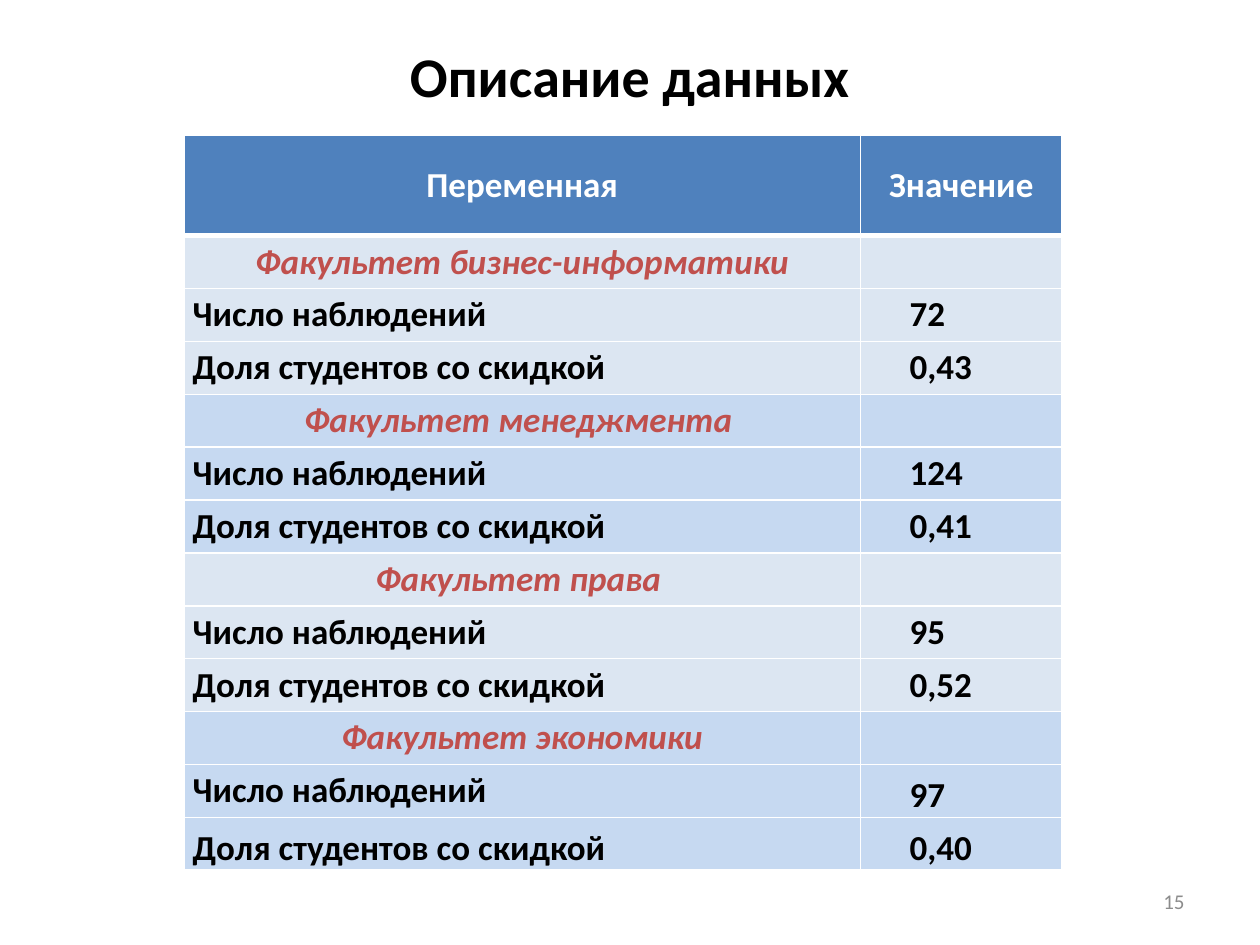
from lxml import etree
from pptx import Presentation
from pptx import util as u
from pptx.dml.color import RGBColor
from pptx.enum import text
from pptx.oxml.ns import qn

FONT = "Calibri"
COLORS = {
    "header": "4F81BD", "light": "DCE6F2", "blue": "C6D9F1",
    "faculty": "C0504D", "white": "FFFFFF", "black": "000000", "grey": "8C8C8C",
}
HEADER = ("Переменная", "Значение")
COUNT, SHARE = "Число наблюдений", "Доля студентов со скидкой"
FACULTIES = [
    ("Факультет бизнес-информатики", "72", "0,43"),
    ("Факультет менеджмента ", "124", "0,41"),
    ("Факультет права ", "95", "0,52"),
    ("Факультет экономики", "97", "0,40"),
]
COLUMNS = (5.37, 1.6)
HEADER_HEIGHT, ROW_HEIGHT = 0.8, 0.42
LEFT, CENTER, RIGHT = text.PP_ALIGN.LEFT, text.PP_ALIGN.CENTER, text.PP_ALIGN.RIGHT
MIDDLE, BOTTOM = text.MSO_ANCHOR.MIDDLE, text.MSO_ANCHOR.BOTTOM


def rgb(name):
    return RGBColor.from_string(COLORS[name])


def write(tf, words, size, color, align, bold=False, italic=False):
    """Set one formatted paragraph and return it."""
    p = tf.paragraphs[0]
    p.text = words
    p.alignment = align
    for r in p.runs:
        r.font.name, r.font.size = FONT, u.Pt(size)
        r.font.bold, r.font.italic = bold, italic
        r.font.color.rgb = rgb(color)
    return p


def set_borders(cell, top=1, bottom=1):
    """Draw white cell borders; widths are in points."""
    tc_pr = cell._tc.get_or_add_tcPr()
    widths = {"a:lnL": 1, "a:lnR": 1, "a:lnT": top, "a:lnB": bottom}
    for i, (tag, width) in enumerate(widths.items()):
        ln = etree.Element(qn(tag), w=str(u.Pt(width)))
        fill = etree.SubElement(ln, qn("a:solidFill"))
        etree.SubElement(fill, qn("a:srgbClr"), val=COLORS["white"])
        tc_pr.insert(i, ln)


def style_cell(cell, fill, anchor=MIDDLE):
    cell.fill.solid()
    cell.fill.fore_color.rgb = rgb(fill)
    cell.vertical_anchor = anchor
    cell.margin_left = cell.margin_right = u.Inches(0.07)
    cell.margin_top = cell.margin_bottom = 0


def fill_cell(cell, words, color="black", align=LEFT, italic=False, indent=0):
    p = write(cell.text_frame, words, 20, color, align, True, italic)
    p.space_before = p.space_after = u.Pt(3)
    if indent:
        p._p.get_or_add_pPr().set("marL", str(u.Inches(indent)))


def add_title(s, words):
    sp = s.shapes.title
    sp.left, sp.top, sp.width, sp.height = map(u.Inches, (0.5, -0.03, 9, 1.25))
    sp.text_frame.vertical_anchor = MIDDLE
    write(sp.text_frame, words, 32, "black", CENTER, bold=True)


def add_data_table(s):
    rows = 1 + 3 * len(FACULTIES)
    height = HEADER_HEIGHT + ROW_HEIGHT * (rows - 1)
    table = s.shapes.add_table(rows, len(COLUMNS), u.Inches(1.46), u.Inches(1.07),
                               u.Inches(sum(COLUMNS)), u.Inches(height)).table
    for column, width in zip(table.columns, COLUMNS):
        column.width = u.Inches(width)
    for i, row in enumerate(table.rows):
        row.height = u.Inches(ROW_HEIGHT if i else HEADER_HEIGHT)

    # Header row
    for cell, words in zip(table.rows[0].cells, HEADER):
        style_cell(cell, "header")
        fill_cell(cell, words, "white", CENTER)

    # One band of three rows per faculty
    for n, (faculty, count, share) in enumerate(FACULTIES):
        first = 1 + 3 * n
        band = ("light", "blue")[n % 2]
        for i in range(first, first + 3):
            for cell in table.rows[i].cells:
                style_cell(cell, band)
        fill_cell(table.cell(first, 0), faculty, "faculty", CENTER, italic=True)
        for i, (label, value) in enumerate(((COUNT, count), (SHARE, share)), first + 1):
            fill_cell(table.cell(i, 0), label)
            fill_cell(table.cell(i, 1), value, indent=0.32)

    # The closing cells sit on the bottom edge
    for i, j in ((rows - 2, 1), (rows - 1, 0), (rows - 1, 1)):
        table.cell(i, j).vertical_anchor = BOTTOM

    # Thin grid with a thick rule under the header
    for i, row in enumerate(table.rows):
        for cell in row.cells:
            set_borders(cell, top=3 if i == 1 else 1, bottom=3 if i == 0 else 1)


def add_page_number(s, number):
    tf = s.shapes.add_textbox(*map(u.Inches, (7.17, 6.95, 2.33, 0.4))).text_frame
    tf.word_wrap = True
    tf.vertical_anchor = MIDDLE
    write(tf, number, 12, "grey", RIGHT)


def main():
    prs = Presentation()
    prs.slide_width, prs.slide_height = u.Inches(10), u.Inches(7.5)
    s = prs.slides.add_slide(prs.slide_layouts[5])
    add_title(s, "Описание данных")
    add_data_table(s)
    add_page_number(s, "15")
    prs.save("out.pptx")


if __name__ == "__main__":
    main()
